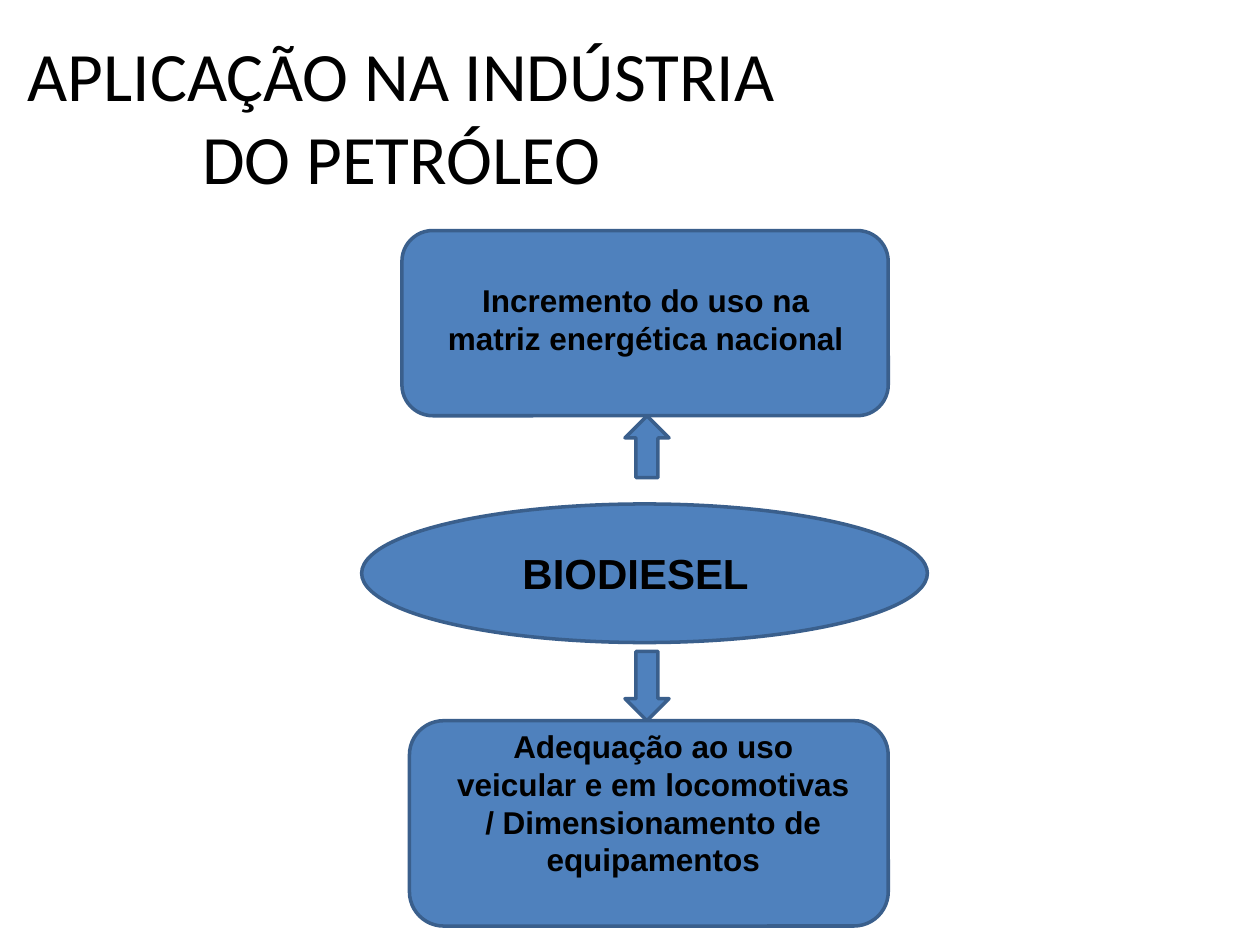
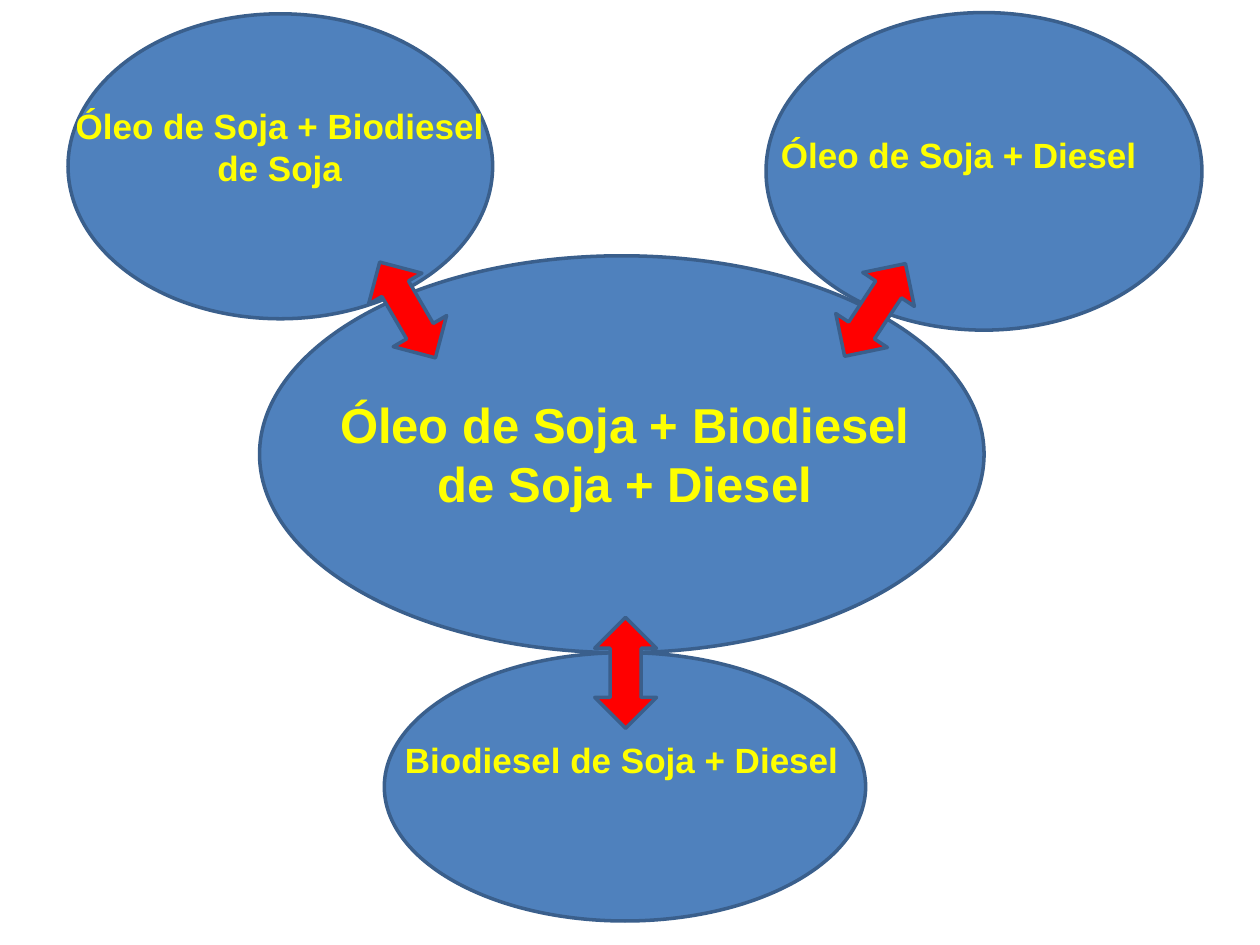
"""Builds two slides of ellipse and arrow diagrams about biodiesel."""
from pptx import Presentation, util as u
from pptx.dml import color
from pptx.enum import shapes, text

G = shapes.MSO_SHAPE
BLUE, EDGE, RED, YELLOW, BLACK = "4F81BD", "3A5F8C", "FF0000", "FFFF00", "000000"
LABEL = {"name": "Arial", "bold": True}
TITLE = {"name": "Calibri", "size": u.Pt(39.6)}
CENTER, LEFT = text.PP_ALIGN.CENTER, text.PP_ALIGN.LEFT


def add_shape(s, kind, at, fill=BLUE, rot=0):
    sp = s.shapes.add_shape(kind, *map(u.Inches, at))
    sp.shadow.inherit = False
    sp.rotation = rot
    sp.fill.solid()
    sp.fill.fore_color.rgb = color.RGBColor.from_string(fill)
    sp.line.color.rgb = color.RGBColor.from_string(EDGE)
    sp.line.width = u.Pt(2)


def add_text(s, words, at, fmt, hue, align=CENTER, anchor=text.MSO_ANCHOR.TOP):
    tf = s.shapes.add_textbox(*map(u.Inches, at)).text_frame
    tf.word_wrap = True
    tf.vertical_anchor = anchor
    p = tf.paragraphs[0]
    p.alignment = align
    r = p.add_run()
    r.text = words
    for key, value in fmt.items():
        setattr(r.font, key, value)
    r.font.color.rgb = color.RGBColor.from_string(hue)


prs = Presentation()
prs.slide_width, prs.slide_height = u.Inches(10), u.Inches(7.5)
blank = prs.slide_layouts[6]

s = prs.slides.add_slide(blank)
add_text(s, "APLICAÇÃO NA INDÚSTRIA DO PETRÓLEO", (0.09, 0.29, 6.19, 1.25),
         TITLE, BLACK, anchor=text.MSO_ANCHOR.MIDDLE)
for kind, at in [
    (G.OVAL, (2.87, 4, 4.49, 1.1)),
    (G.ROUNDED_RECTANGLE, (3.25, 5.72, 3.8, 1.63)),
    (G.ROUNDED_RECTANGLE, (3.19, 1.83, 3.86, 1.47)),
    (G.DOWN_ARROW, (4.96, 5.17, 0.35, 0.55)),
    (G.UP_ARROW, (4.96, 3.3, 0.35, 0.49)),
]:
    add_shape(s, kind, at)
for words, at, size in [
    ("BIODIESEL", (3.51, 4.3, 3.07, 0.5), 24),
    ("Adequação ao uso veicular e em locomotivas / Dimensionamento de equipamentos",
     (3.53, 5.72, 3.31, 1.62), 18),
    ("Incremento do uso na matriz energética nacional", (3.43, 2.18, 3.39, 1.01), 18),
]:
    add_text(s, words, at, {**LABEL, "size": u.Pt(size)}, BLACK)

s = prs.slides.add_slide(blank)
for at in [(2.06, 2.03, 5.75, 3.15), (0.54, 0.11, 3.37, 2.42),
           (6.08, 0.1, 3.46, 2.52), (3.05, 5.18, 3.82, 2.13)]:
    add_shape(s, G.OVAL, at)
for words, at, size, align in [
    ("Biodiesel de Soja + Diesel", (2.85, 5.81, 4.17, 0.74), 20, CENTER),
    ("Óleo de Soja + Diesel", (6.1, 1.01, 4.57, 0.74), 20, LEFT),
    ("Óleo de Soja + Biodiesel de Soja", (0.33, 0.78, 3.78, 1.08), 20, CENTER),
    ("Óleo de Soja + Biodiesel de Soja + Diesel", (2.56, 3.08, 4.8, 1.82), 28, CENTER),
]:
    add_text(s, words, at, {**LABEL, "size": u.Pt(size)}, YELLOW, align)
for left, top, rot in [(4.72, 4.9, 0), (6.7, 2.02, 33.3), (2.99, 2.02, 329.8)]:
    add_shape(s, G.UP_DOWN_ARROW, (left, top, 0.49, 0.88), RED, rot)

prs.save("out.pptx")
